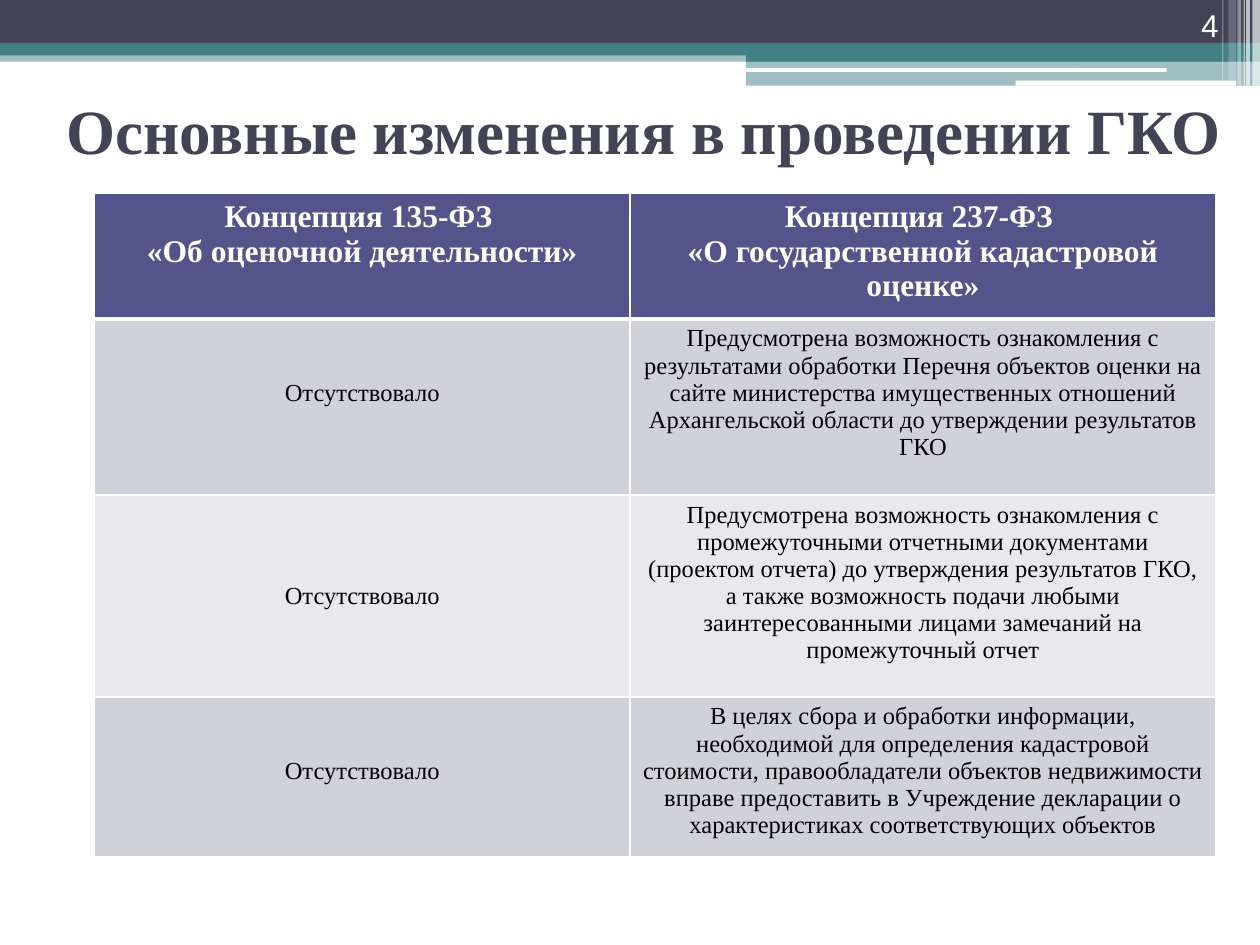
from lxml import etree
from pptx import Presentation
from pptx import util as u
from pptx.dml.color import RGBColor
from pptx.enum import shapes, text
from pptx.oxml.ns import qn

COLORS = {
    "dark": "424456", "teal": "438086", "white": "FFFFFF", "black": "000000",
    "header": "53548A", "band": "D1D1DA", "light": "E9E9ED",
}
SERIF = "Times New Roman"
TITLE = {"name": SERIF, "size": u.Pt(36), "bold": True, "color": "dark"}
HEADER = {"name": SERIF, "size": u.Pt(18), "bold": True, "color": "white"}
BODY = {"name": SERIF, "size": u.Pt(14), "bold": False, "color": "black"}
NUMBER = {"name": "Arial", "size": u.Pt(18), "bold": False, "color": "white"}
LINE = 0.215  # height of one body line, inches


class SlideBuilder:
    """Holds the style and the current slide."""

    def __init__(self, slide, colors):
        self.slide = slide
        self.colors = colors

    def rgb(self, name):
        return RGBColor.from_string(self.colors[name])

    def paint(self, target, color, alpha=100):
        target.fill.solid()
        target.fill.fore_color.rgb = self.rgb(color)
        if alpha < 100:
            clr = target.element.spPr.find(".//" + qn("a:srgbClr"))
            etree.SubElement(clr, qn("a:alpha")).set("val", str(alpha * 1000))

    def add_lines(self, tf, lines, fmt, align):
        tf.word_wrap = True
        for i, line in enumerate(lines):
            p = tf.add_paragraph() if i else tf.paragraphs[0]
            p.alignment = align
            r = p.add_run()
            r.text = line
            for key, value in fmt.items():
                if key == "color":
                    r.font.color.rgb = self.rgb(value)
                else:
                    setattr(r.font, key, value)

    def bar(self, box, color, alpha=100, kind=shapes.MSO_SHAPE.RECTANGLE):
        sp = self.slide.shapes.add_shape(kind, *map(u.Inches, box))
        sp.shadow.inherit = False
        sp.line.fill.background()
        self.paint(sp, color, alpha)

    def title(self, line, box):
        sp = self.slide.shapes.title
        sp.left, sp.top, sp.width, sp.height = map(u.Inches, box)
        tf = sp.text_frame
        tf.auto_size = text.MSO_AUTO_SIZE.NONE
        tf.vertical_anchor = text.MSO_ANCHOR.MIDDLE
        self.add_lines(tf, [line], TITLE, text.PP_ALIGN.LEFT)
        self.slide.shapes.element.append(sp.element)  # above the bars

    def label(self, line, box):
        tf = self.slide.shapes.add_textbox(*map(u.Inches, box)).text_frame
        tf.vertical_anchor = text.MSO_ANCHOR.BOTTOM
        self.add_lines(tf, [line], NUMBER, text.PP_ALIGN.RIGHT)

    def borders(self, cell, widths):
        props = cell._tc.get_or_add_tcPr()
        for i, (side, width) in enumerate(widths.items()):
            ln = etree.Element(qn("a:ln" + side), w=str(int(u.Pt(width))))
            fill = etree.SubElement(ln, qn("a:solidFill"))
            etree.SubElement(fill, qn("a:srgbClr"), val=self.colors["white"])
            props.insert(i, ln)

    def table(self, rows, left, top, widths, heights):
        frame = self.slide.shapes.add_table(
            len(rows), len(widths), u.Inches(left), u.Inches(top),
            u.Inches(sum(widths)), u.Inches(sum(heights)))
        table = frame.table
        for col, width in zip(table.columns, widths):
            col.width = u.Inches(width)
        for i, (cells, drop) in enumerate(rows):
            table.rows[i].height = u.Inches(heights[i])
            color = "header" if i == 0 else "band" if i % 2 else "light"
            for j, lines in enumerate(cells):
                cell = table.cell(i, j)
                self.paint(cell, color)
                self.borders(cell, {"L": 1, "R": 1, "T": 3 if i == 1 else 1,
                                    "B": 3 if i == 0 else 1})
                if j == 0:
                    cell.margin_top = u.Inches(0.05 + drop * LINE)
                self.add_lines(cell.text_frame, lines, BODY if i else HEADER,
                               text.PP_ALIGN.CENTER)


# Banner bars: box, colour, opacity
BARS = [
    ((0, 0.4, 10, 0.09), "teal", 50),
    ((0, 0, 10, 0.34), "dark", 100),
    ((0, 0.34, 10, 0.1), "teal", 100),
    ((5.92, 0.39, 4.08, 0.1), "teal", 100),
    ((5.92, 0.48, 4.08, 0.2), "teal", 50),
]
ROUNDED = [(5.91, 0.54, 3.35, 0.03), (8.06, 0.64, 1.75, 0.04)]
# Stripes at the right edge: left, width, height, opacity
STRIPES = [
    (9.94, 0.06, 0.68, 65), (9.89, 0.03, 0.68, 65), (9.87, 0.01, 0.68, 60),
    (9.82, 0.03, 0.68, 40), (9.75, 0.06, 0.64, 20), (9.7, 0.01, 0.64, 30),
]
# Table rows: cells as lists of paragraphs, lines the left text is lowered by
ABSENT = ["Отсутствовало"]
ROWS = [
    ((["Концепция 135-ФЗ ", "«Об оценочной деятельности»"],
      ["Концепция 237-ФЗ ", "«О государственной кадастровой оценке»"]), 0),
    ((ABSENT, ["Предусмотрена возможность ознакомления с результатами обработки "
               "Перечня объектов оценки на сайте министерства имущественных "
               "отношений Архангельской области до утверждении результатов ГКО"]), 2),
    ((ABSENT, ["Предусмотрена возможность ознакомления с промежуточными отчетными "
               "документами (проектом отчета) до утверждения результатов ГКО, "
               "а также возможность подачи любыми заинтересованными лицами "
               "замечаний на промежуточный отчет"]), 3),
    ((ABSENT, ["В целях сбора и обработки информации, необходимой для определения "
               "кадастровой стоимости, правообладатели объектов недвижимости вправе "
               "предоставить в Учреждение декларации о характеристиках "
               "соответствующих объектов"]), 2),
]


def main():
    prs = Presentation()
    prs.slide_width, prs.slide_height = u.Inches(10), u.Inches(7.5)
    page = SlideBuilder(prs.slides.add_slide(prs.slide_layouts[5]), COLORS)

    # Banner
    for box, color, alpha in BARS:
        page.bar(box, color, alpha)
    for box in ROUNDED:
        page.bar(box, "white", kind=shapes.MSO_SHAPE.ROUNDED_RECTANGLE)
    for left, width, height, alpha in STRIPES:
        page.bar((left, 0, width, height), "white", alpha)

    # Title and slide number
    page.title("Основные изменения в проведении ГКО", (0.43, 0.44, 9.39, 1.17))
    page.label("4", (8.94, 0, 0.83, 0.4))

    # Comparison table
    page.table(ROWS, 0.75, 1.53, [4.25, 4.65], [0.92, 1.4, 1.6, 1.18])

    prs.save("out.pptx")


if __name__ == "__main__":
    main()
